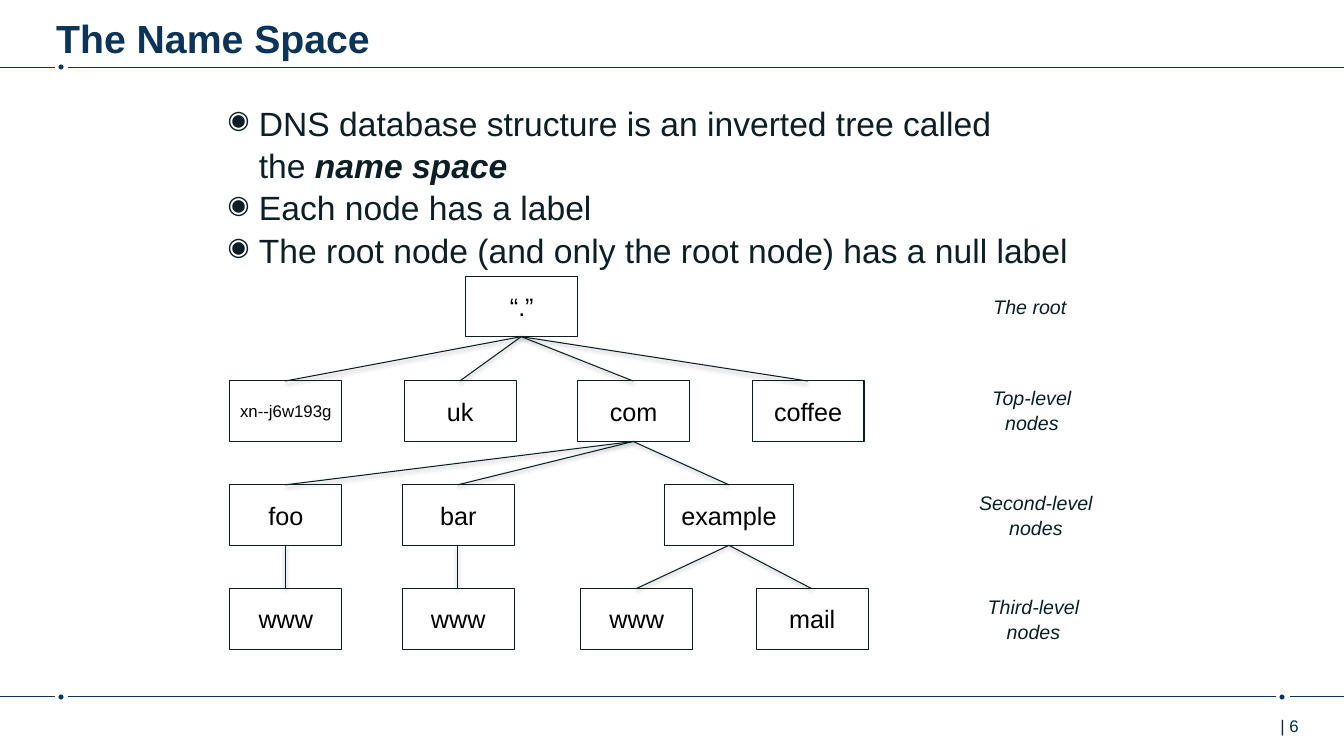
from dataclasses import dataclass

from lxml.etree import SubElement
from pptx import Presentation
from pptx.dml.color import RGBColor
from pptx.enum.shapes import MSO_CONNECTOR, MSO_SHAPE
from pptx.enum.text import MSO_ANCHOR, PP_ALIGN
from pptx.oxml.ns import qn
from pptx.util import Pt

SCALE = 9144  # EMU in one px, 100 px to the inch


@dataclass(frozen=True)
class Theme:
    face: str = "Arial"
    navy: str = "0C3458"
    ink: str = "0C1F24"
    edge: str = "0A1F24"
    black: str = "000000"
    page: str = "002B49"
    head: int = 28
    body: int = 24
    node: int = 18
    side: int = 14
    small: int = 12
    lead: float = 1.05


def px(*sizes):
    return [size * SCALE for size in sizes]


class Canvas:
    def __init__(self, slide, theme):
        self.slide = slide
        self.theme = theme

    def style(self, para, size, color, bold=False, italic=False):
        for run in para.runs:
            font = run.font
            font.name = self.theme.face
            font.size = Pt(size)
            font.bold = bold
            font.italic = italic
            font.color.rgb = RGBColor.from_string(color)

    def text(self, box, words, size, color, align=PP_ALIGN.LEFT, lead=1.0,
             wrap=True, inset=10, **look):
        frame = self.slide.shapes.add_textbox(*px(*box)).text_frame
        frame.word_wrap = wrap
        frame.margin_left, frame.margin_right = px(inset, inset)
        frame.text = words
        for para in frame.paragraphs:
            para.alignment = align
            para.line_spacing = lead
            self.style(para, size, color, **look)
        return frame

    def bullet(self, para):
        props = para._p.get_or_add_pPr()
        props.set("marL", str(31 * SCALE))
        props.set("indent", str(-31 * SCALE))
        SubElement(props, qn("a:buSzPct"), val="75000")
        SubElement(props, qn("a:buChar"), char="◉")

    def line(self, start, end, color, width, shadow=False):
        link = self.slide.shapes.add_connector(
            MSO_CONNECTOR.STRAIGHT, *px(*start, *end))
        link.line.color.rgb = RGBColor.from_string(color)
        link.line.width = Pt(width)
        effect = SubElement(link._element.spPr, qn("a:effectLst"))
        if shadow:
            outer = SubElement(effect, qn("a:outerShdw"), blurRad="40000",
                               dist="20000", dir="5400000", rotWithShape="0")
            tint = SubElement(outer, qn("a:srgbClr"), val=self.theme.black)
            SubElement(tint, qn("a:alpha"), val="38000")

    def dot(self, left, top):
        shape = self.slide.shapes.add_shape(
            MSO_SHAPE.OVAL, *px(left, top, 5, 5))
        shape.shadow.inherit = False
        shape.fill.solid()
        shape.fill.fore_color.rgb = RGBColor.from_string(self.theme.navy)
        shape.line.fill.background()

    def node(self, box, label, size):
        shape = self.slide.shapes.add_shape(MSO_SHAPE.RECTANGLE, *px(*box))
        shape.shadow.inherit = False
        shape.fill.background()
        shape.line.color.rgb = RGBColor.from_string(self.theme.edge)
        shape.line.width = Pt(0.75)
        frame = shape.text_frame
        frame.margin_left = frame.margin_right = 0
        frame.vertical_anchor = MSO_ANCHOR.MIDDLE
        frame.text = label
        para = frame.paragraphs[0]
        para.alignment = PP_ALIGN.CENTER
        self.style(para, size, self.theme.black)


def main():
    deck = Presentation()
    deck.slide_width, deck.slide_height = px(1333, 750)
    theme = Theme()
    page = Canvas(deck.slides.add_slide(deck.slide_layouts[6]), theme)

    # Header and footer rules
    for level, spans in ((67, ((0, 55), (67, 1333))),
                         (691, ((0, 55), (67, 1266), (1279, 1333)))):
        for left, right in spans:
            page.line((left, level), (right, level), theme.navy, 1)
    for spot in ((58, 64), (58, 689), (1269, 689)):
        page.dot(*spot)
    page.text((1270, 705, 63, 40), "| 6", theme.small, theme.page, inset=0)

    # Title
    page.text((46, 7, 1186, 49), "The Name Space", theme.head, theme.navy,
              lead=theme.lead, bold=True)

    # Bullets
    points = ("Each node has a label",
              "The root node (and only the root node) has a null label")
    frame = page.text((216, 95, 901, 252), "", theme.body, theme.ink)
    first = frame.paragraphs[0]
    first.text = "DNS database structure is an inverted tree called\nthe "
    first.add_run().text = "name space"
    for point in points:
        frame.add_paragraph().text = point
    for para in frame.paragraphs:
        page.bullet(para)
        para.line_spacing = theme.lead
        page.style(para, theme.body, theme.ink)
    term = first.runs[-1].font
    term.bold = term.italic = True

    # Tree: key, label, row, left, width, parent
    tops = (274, 378, 481, 584)
    wide = 111
    cols = [228 + round(172.67 * i) for i in range(4)]
    tree = (
        ("root", "“.”", 0, 462, wide, None),
        ("xn", "xn--j6w193g", 1, cols[0], wide, "root"),
        ("uk", "uk", 1, cols[1], wide, "root"),
        ("com", "com", 1, cols[2], wide, "root"),
        ("coffee", "coffee", 1, cols[3], wide, "root"),
        ("foo", "foo", 2, cols[0], wide, "com"),
        ("bar", "bar", 2, 399, wide, "com"),
        ("example", "example", 2, 659, 128, "com"),
        ("foo www", "www", 3, cols[0], wide, "foo"),
        ("bar www", "www", 3, 399, wide, "bar"),
        ("ex www", "www", 3, 576, wide, "example"),
        ("mail", "mail", 3, 750, wide, "example"),
    )
    tall = 60
    feet = {}
    for key, label, row, left, width, parent in tree:
        top = tops[row]
        mid = left + width // 2
        feet[key] = (mid, top + tall)
        if parent:
            page.line(feet[parent], (mid, top), theme.edge, 0.75, shadow=True)
        size = theme.small if key == "xn" else theme.node
        page.node((left, top, width, tall), label, size)

    # Level names
    sides = (("The root", 975, 287, 93, 34),
             ("Top-level\nnodes", 972, 377, 103, 57),
             ("Second-level\nnodes", 961, 481, 133, 57),
             ("Third-level\nnodes", 969, 584, 112, 57))
    for words, *box in sides:
        page.text(box, words, theme.side, theme.edge, PP_ALIGN.CENTER,
                  theme.lead, wrap=False, italic=True)

    deck.save("out.pptx")


if __name__ == "__main__":
    main()
